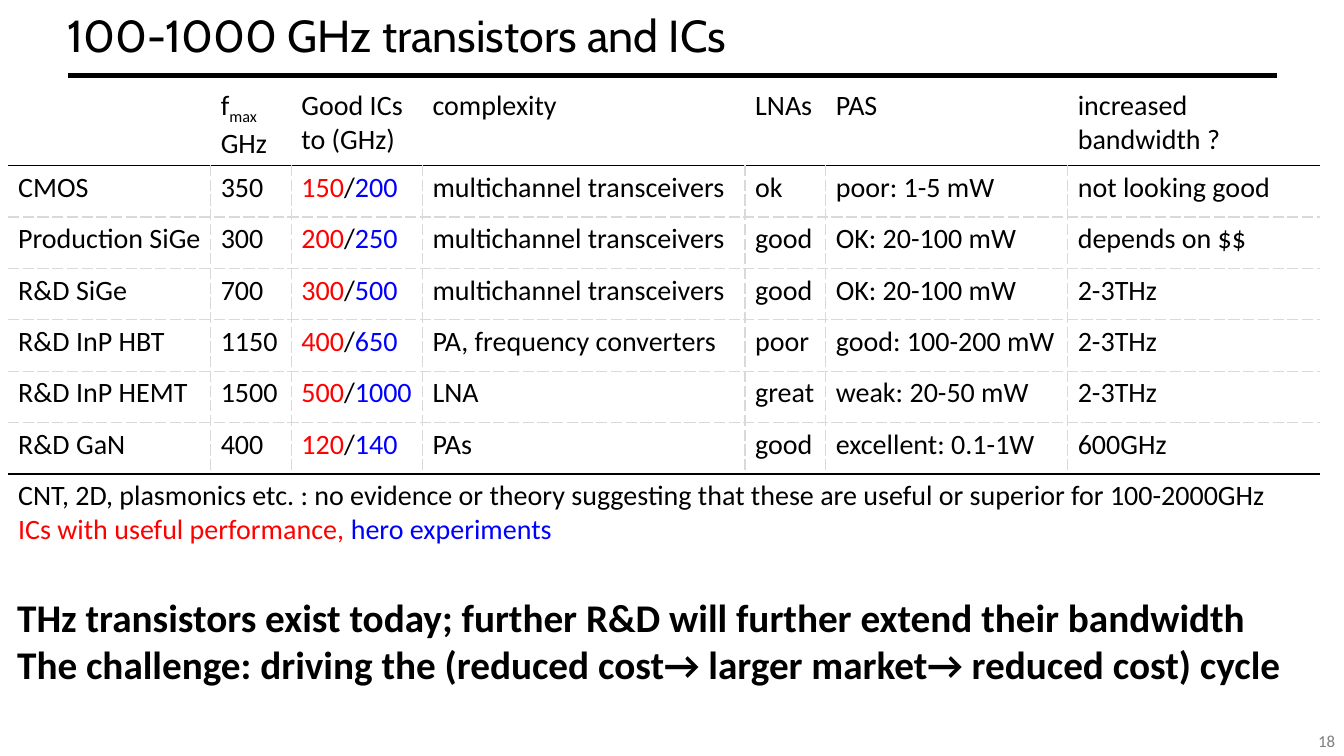
from dataclasses import dataclass

from lxml import etree
from pptx import Presentation
from pptx.dml.color import RGBColor
from pptx.enum.shapes import MSO_CONNECTOR
from pptx.enum.text import MSO_ANCHOR, PP_ALIGN
from pptx.oxml.ns import qn
from pptx.util import Inches, Pt

STRAIGHT = MSO_CONNECTOR.STRAIGHT
MIDDLE = MSO_ANCHOR.MIDDLE
LEFT = PP_ALIGN.LEFT
RIGHT = PP_ALIGN.RIGHT
TITLE_ONLY = 5


@dataclass(frozen=True)
class Theme:
    """Colours, fonts and type sizes of the slide."""
    ink: str = "000000"
    paper: str = "FFFFFF"
    useful: str = "FF0000"
    hero: str = "0000FF"
    grid: str = "D9D9D9"
    muted: str = "7F7F7F"
    heading_font: str = "Cabin"
    body_font: str = "Calibri"
    title_size: int = 32
    table_size: int = 20
    message_size: int = 28
    number_size: int = 12


THEME = Theme()

COLUMN_WIDTHS = [2.01, 0.8, 1.3, 3.2, 0.8, 2.4, 2.5]
HEADER_HEIGHT = 0.67
ROW_HEIGHT = 0.51
IC_COLUMN = 2
HEADINGS = ["", "f\nGHz", "Good ICs to (GHz)", "complexity", "LNAs", "PAS",
            "increased \vbandwidth ?"]
TECHNOLOGIES = [
    ["CMOS", "350", "150/200", "multichannel transceivers", "ok",
     "poor: 1-5 mW", "not looking good"],
    ["Production SiGe", "300", "200/250", "multichannel transceivers", "good",
     "OK: 20-100 mW", "depends on $$"],
    ["R&D SiGe", "700", "300/500", "multichannel transceivers", "good",
     "OK: 20-100 mW", "2-3THz"],
    ["R&D InP HBT", "1150", "400/650", "PA, frequency converters", "poor",
     "good: 100-200 mW", "2-3THz"],
    ["R&D InP HEMT", "1500", "500/1000", "LNA", "great",
     "weak: 20-50 mW", "2-3THz"],
    ["R&D GaN", "400", "120/140", "PAs", "good",
     "excellent: 0.1-1W", "600GHz"],
]
OUTLOOK = ("CNT, 2D, plasmonics etc. : no evidence or theory suggesting that "
           "these are useful or superior for 100-2000GHz")
MESSAGE = ("THz transistors exist today; further R&D will further extend their bandwidth\v"
           "The challenge: driving the (reduced cost→ larger market→ reduced cost) cycle")


def format_span(span, size, color=THEME.ink, font=THEME.body_font, bold=False):
    """Set the typeface, size, colour and weight of a run."""
    span.font.name = font
    span.font.size = Pt(size)
    span.font.bold = bold
    span.font.color.rgb = RGBColor.from_string(color)


def format_frame(frame, size, **style):
    """Format every run of a text frame alike."""
    for para in frame.paragraphs:
        for span in para.runs:
            format_span(span, size, **style)


def add_span(para, text, color):
    """Append a coloured table run to a paragraph."""
    span = para.add_run()
    span.text = text
    format_span(span, THEME.table_size, color)
    return span


def clear_margins(frame):
    """Remove the inner margins of a text frame."""
    frame.margin_left = frame.margin_right = 0
    frame.margin_top = frame.margin_bottom = 0


def add_title(page, text):
    """Place and format the title placeholder."""
    title = page.shapes.title
    title.left, title.top = Inches(0.67), Inches(0.16)
    title.width, title.height = Inches(12.08), Inches(0.44)
    frame = title.text_frame
    frame.text = text
    frame.vertical_anchor = MIDDLE
    clear_margins(frame)
    frame.paragraphs[0].alignment = LEFT
    frame.paragraphs[0].line_spacing = 0.87
    format_frame(frame, THEME.title_size, font=THEME.heading_font)


def add_rule(page):
    """Draw the heavy rule below the title."""
    rule = page.shapes.add_connector(
        STRAIGHT, Inches(0.67), Inches(0.75), Inches(12.67), Inches(0.75))
    rule.line.color.rgb = RGBColor.from_string(THEME.ink)
    rule.line.width = Pt(3)
    etree.SubElement(rule.element.spPr, qn("a:effectLst"))


def add_text(page, left, top, width, height, text, size, **style):
    """Add a wrapping text box and return its frame."""
    box = page.shapes.add_textbox(
        Inches(left), Inches(top), Inches(width), Inches(height))
    frame = box.text_frame
    frame.word_wrap = True
    frame.text = text
    format_frame(frame, size, **style)
    return frame


def add_border(cell, side, color, dash="solid"):
    """Add one cell border, or an invisible one when there is no colour."""
    properties = cell._tc.get_or_add_tcPr()
    line = etree.SubElement(properties, qn(f"a:ln{side}"), w=str(Pt(1)))
    if color is None:
        etree.SubElement(line, qn("a:noFill"))
        return
    fill = etree.SubElement(line, qn("a:solidFill"))
    etree.SubElement(fill, qn("a:srgbClr"), val=color)
    etree.SubElement(line, qn("a:prstDash"), val=dash)


def style_cell(cell, row, column):
    """Apply borders and fill according to the place in the table."""
    last = len(TECHNOLOGIES) + 1
    dashed = (THEME.grid, "sysDash")

    def vertical(edge):
        inner = 0 < edge < len(COLUMN_WIDTHS) and 0 < row < last
        return dashed if inner else (None,)

    def horizontal(edge):
        if edge in (1, last):
            return (THEME.ink,)
        return dashed if 1 < edge < last else (None,)

    add_border(cell, "L", *vertical(column))
    add_border(cell, "R", *vertical(column + 1))
    add_border(cell, "T", *horizontal(row))
    add_border(cell, "B", *horizontal(row + 1))
    cell.fill.solid()
    cell.fill.fore_color.rgb = RGBColor.from_string(THEME.paper)


def fill_ic_cell(cell, text):
    """Write useful and hero frequencies in their own colours."""
    useful, hero = text.split("/")
    para = cell.text_frame.paragraphs[0]
    add_span(para, useful, THEME.useful)
    add_span(para, "/", THEME.ink)
    add_span(para, hero, THEME.hero)


def fill_outlook(table, row):
    """Merge the closing row and write its remark and colour key."""
    cell = table.cell(row, 0)
    cell.merge(table.cell(row, len(COLUMN_WIDTHS) - 1))
    para = cell.text_frame.paragraphs[0]
    add_span(para, OUTLOOK, THEME.ink)
    para.add_line_break()
    add_span(para, "ICs with useful performance, ", THEME.useful)
    add_span(para, "hero experiments", THEME.hero)


def add_technology_table(page):
    """Add the table of transistor technologies."""
    heights = [HEADER_HEIGHT] + [ROW_HEIGHT] * (len(TECHNOLOGIES) + 1)
    table = page.shapes.add_table(
        len(heights), len(COLUMN_WIDTHS), Inches(0.08), Inches(0.83),
        Inches(sum(COLUMN_WIDTHS)), Inches(sum(heights))).table
    table.first_row = table.horz_banding = False
    for column, width in zip(table.columns, COLUMN_WIDTHS):
        column.width = Inches(width)
    for row, height in enumerate(heights):
        table.rows[row].height = Inches(height)
        for column in range(len(COLUMN_WIDTHS)):
            style_cell(table.cell(row, column), row, column)
    for row, texts in enumerate([HEADINGS] + TECHNOLOGIES):
        for column, text in enumerate(texts):
            cell = table.cell(row, column)
            if row and column == IC_COLUMN:
                fill_ic_cell(cell, text)
            else:
                cell.text_frame.text = text
                format_frame(cell.text_frame, THEME.table_size)
    subscript = add_span(table.cell(0, 1).text_frame.paragraphs[0], "max", THEME.ink)
    subscript.font._element.set("baseline", "-25000")
    fill_outlook(table, len(heights) - 1)


def main():
    """Build and save the slide."""
    deck = Presentation()
    deck.slide_width, deck.slide_height = Inches(13.33), Inches(7.5)
    page = deck.slides.add_slide(deck.slide_layouts[TITLE_ONLY])
    add_rule(page)
    number = add_text(page, 12.56, 7.22, 0.78, 0.28, "18",
                      THEME.number_size, color=THEME.muted)
    number.paragraphs[0].alignment = RIGHT
    number.paragraphs[0].line_spacing = 0.9
    add_title(page, "100-1000 GHz transistors and ICs")
    add_technology_table(page)
    message = add_text(page, 0.17, 5.89, 12.75, 0.94, MESSAGE,
                       THEME.message_size, bold=True)
    clear_margins(message)
    deck.save("out.pptx")


if __name__ == "__main__":
    main()
